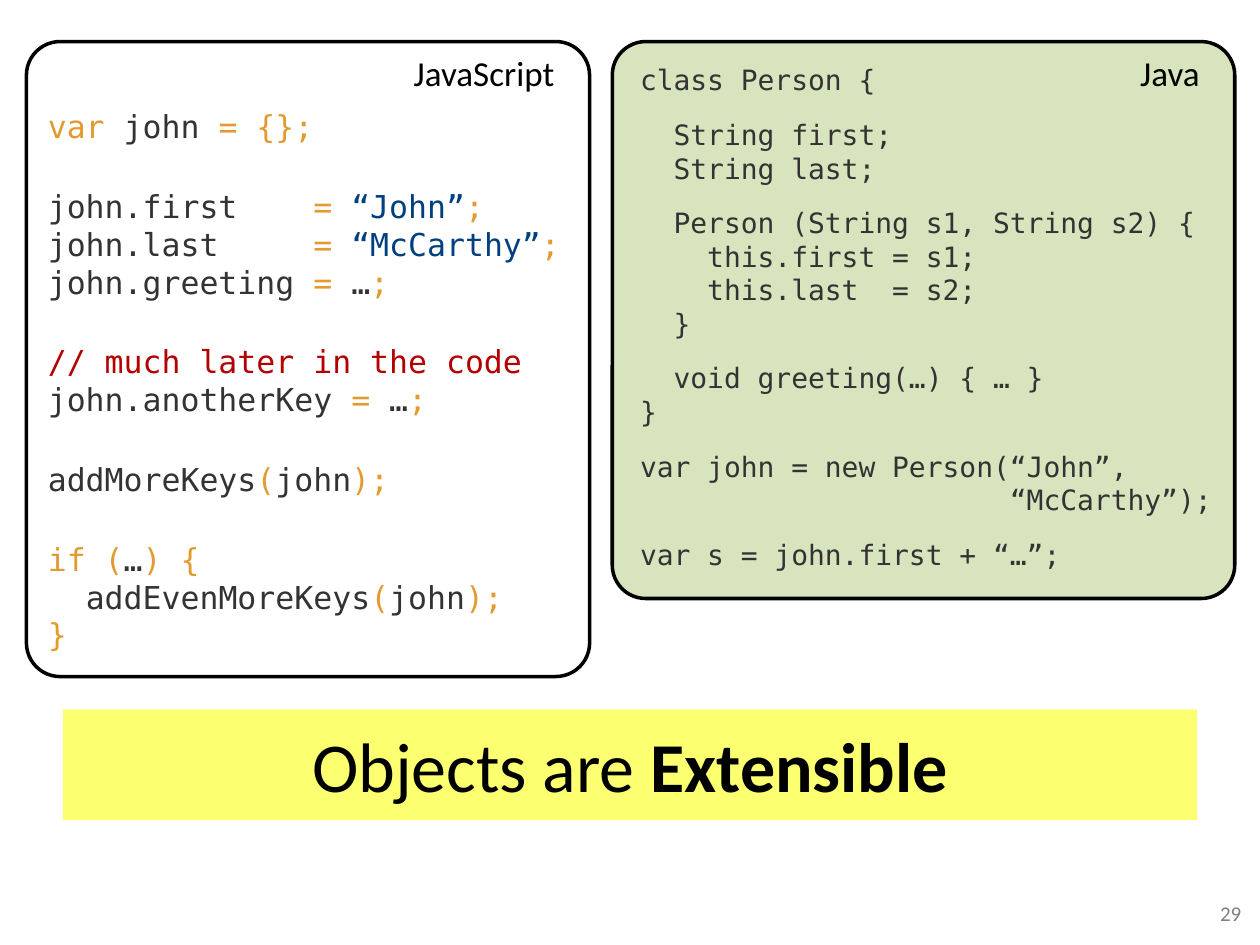
from copy import deepcopy
from dataclasses import dataclass

from pptx import Presentation, util as u
from pptx.dml.color import RGBColor
from pptx.enum import shapes, text
from pptx.oxml.ns import qn


@dataclass(frozen=True)
class Theme:
    body_font: str = "Calibri"
    code_font: str = "DejaVu Sans Mono"
    ink: str = "000000"
    code: str = "333333"
    mark: str = "E39B30"
    string: str = "004080"
    comment: str = "B30000"
    java_fill: str = "D7E4BD"
    banner_fill: str = "FBFF70"
    muted: str = "808080"
    banner_size: int = 40
    label_size: int = 20
    script_size: int = 18
    java_size: int = 16
    number_size: int = 12
    outline: int = 2


@dataclass(frozen=True)
class Box:
    left: float
    top: float
    width: float
    height: float

    def inside(self, left, top, right=0, bottom=0):
        """Return this box with each side moved inwards by the given inches."""
        return Box(self.left + left, self.top + top,
                   self.width - left - right, self.height - top - bottom)

    def lengths(self):
        return [u.Inches(n) for n in (self.left, self.top, self.width, self.height)]


THEME = Theme()
PAGE = Box(0, 0, 10, 7.5)
CODE, MARK, STRING, COMMENT = THEME.code, THEME.mark, THEME.string, THEME.comment

SCRIPT_CODE = [
    [("var ", MARK), ("john ", CODE), ("= {};", MARK)],
    [("john.first    ", CODE), ("= ", MARK), ("“John”", STRING), (";\n", MARK),
     ("john.last     ", CODE), ("= ", MARK), ("“McCarthy”", STRING), (";\n", MARK),
     ("john.greeting ", CODE), ("= ", MARK), ("…", CODE), (";", MARK)],
    [("// much later in the code\n", COMMENT),
     ("john.anotherKey ", CODE), ("= ", MARK), ("…", CODE), (";", MARK)],
    [("addMoreKeys", CODE), ("(", MARK), ("john", CODE), (");", MARK)],
    [("if (", MARK), ("…", CODE), (") {\n  ", MARK), ("addEvenMoreKeys", CODE),
     ("(", MARK), ("john", CODE), (");\n}", MARK)],
]

JAVA_CODE = [[(block, CODE)] for block in (
    "class Person {",
    "  String first;\n  String last;",
    "  Person (String s1, String s2) {\n    this.first = s1;\n"
    "    this.last  = s2;\n  }",
    "  void greeting(…) { … }\n}",
    "var john = new Person(“John”,\n                      “McCarthy”);",
    "var s = john.first + “…”;",
)]


def style(span, font, size, color, bold=False):
    span.font.name = font
    span.font.size = u.Pt(size)
    span.font.color.rgb = RGBColor.from_string(color)
    span.font.bold = bold


def add_span(para, words, font, size, color, bold=False):
    """Add styled text; newlines become line breaks of the same style."""
    for index, line in enumerate(words.split("\n")):
        if index:
            para.add_line_break()
            line_break = para._p.findall(qn("a:br"))[-1]
        span = para.add_run()
        span.text = line
        style(span, font, size, color, bold)
        if index:
            line_break.append(deepcopy(span._r.rPr))
        if not line:
            para._p.remove(span._r)


def set_frame(shape, anchor, right=0):
    frame = shape.text_frame
    frame.word_wrap = True
    frame.vertical_anchor = anchor
    frame.margin_left = frame.margin_top = frame.margin_bottom = 0
    frame.margin_right = u.Inches(right)
    return frame


def add_panel(page, kind, box, fill=None, outline=None):
    panel = page.shapes.add_shape(kind, *box.lengths())
    panel.shadow.inherit = False
    if fill:
        panel.fill.solid()
        panel.fill.fore_color.rgb = RGBColor.from_string(fill)
    else:
        panel.fill.background()
    if outline:
        panel.line.color.rgb = RGBColor.from_string(outline)
        panel.line.width = u.Pt(THEME.outline)
    else:
        panel.line.fill.background()
    return panel


def add_card(page, box, label, fill=None):
    card = add_panel(page, shapes.MSO_SHAPE.ROUNDED_RECTANGLE, box, fill, THEME.ink)
    card.adjustments[0] = 0.06
    para = set_frame(card, text.MSO_ANCHOR.TOP, right=0.2).paragraphs[0]
    para.alignment = text.PP_ALIGN.RIGHT
    add_span(para, label, THEME.body_font, THEME.label_size, THEME.ink)


def add_code(page, box, blocks, size, gap):
    listing = page.shapes.add_textbox(*box.lengths())
    frame = set_frame(listing, text.MSO_ANCHOR.TOP)
    for index, block in enumerate(blocks):
        para = frame.add_paragraph() if index else frame.paragraphs[0]
        para.space_after = u.Pt(gap)
        for words, color in block:
            add_span(para, words, THEME.code_font, size, color)


def add_script_region(page, box):
    add_code(page, box.inside(0.17, 0.52, bottom=0.14), SCRIPT_CODE,
             THEME.script_size, gap=24)
    add_card(page, box, "JavaScript")


def add_java_region(page, box):
    add_card(page, box, "Java", THEME.java_fill)
    add_code(page, box.inside(0.22, 0.17, 0.05, 0.18), JAVA_CODE,
             THEME.java_size, gap=12)


def add_banner(page, box):
    banner = add_panel(page, shapes.MSO_SHAPE.RECTANGLE, box, THEME.banner_fill)
    para = set_frame(banner, text.MSO_ANCHOR.MIDDLE).paragraphs[0]
    para.alignment = text.PP_ALIGN.CENTER
    for words, bold in (("Objects are ", False), ("Extensible", True)):
        add_span(para, words, THEME.body_font, THEME.banner_size, THEME.ink, bold)


def add_page_number(page, box, number):
    holder = page.shapes.add_textbox(*box.lengths())
    para = set_frame(holder, text.MSO_ANCHOR.MIDDLE, right=0.1).paragraphs[0]
    para.alignment = text.PP_ALIGN.RIGHT
    add_span(para, str(number), THEME.body_font, THEME.number_size, THEME.muted)


def main():
    deck = Presentation()
    deck.slide_width, deck.slide_height = u.Inches(PAGE.width), u.Inches(PAGE.height)
    page = deck.slides.add_slide(deck.slide_layouts[6])
    add_script_region(page, PAGE.inside(0.21, 0.33, 5.32, 2.13))
    add_banner(page, PAGE.inside(0.5, 5.63, 0.5, 0.99))
    add_page_number(page, PAGE.inside(7.62, 7.05, 0.05, 0.05), 29)
    add_java_region(page, PAGE.inside(4.86, 0.33, 0.2, 2.75))
    deck.save("out.pptx")


if __name__ == "__main__":
    main()
